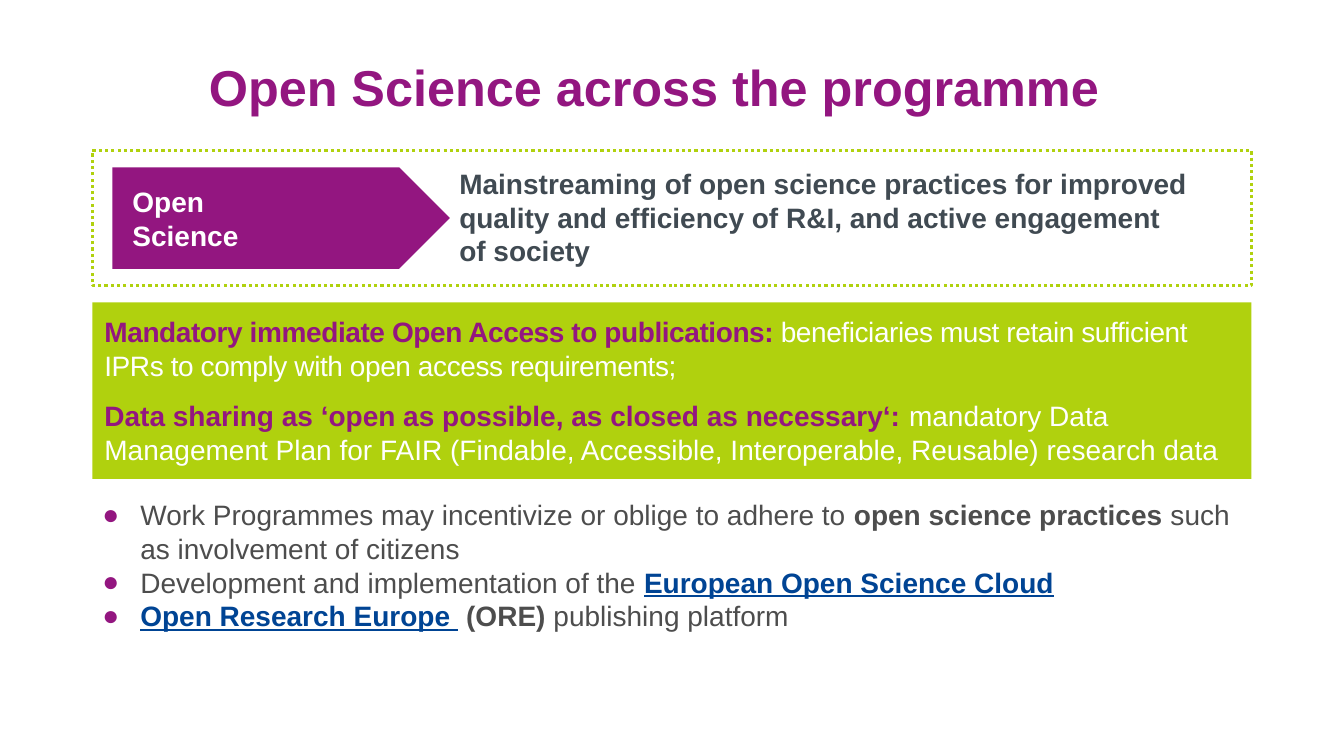
from lxml.etree import SubElement
from pptx import Presentation
from pptx.dml.color import RGBColor
from pptx.enum.dml import MSO_LINE
from pptx.enum.shapes import MSO_SHAPE
from pptx.enum.text import MSO_ANCHOR, MSO_AUTO_SIZE, PP_ALIGN
from pptx.oxml.ns import qn
from pptx.util import Pt

PURPLE, LIME, WHITE = "931680", "B0D10E", "FFFFFF"
SLATE, GREY, LINK = "404A52", "4D4D4D", "004494"
MARGIN, CONTENT_WIDTH = 66, 828


def colour(hex_string):
    return RGBColor.from_string(hex_string)


class ProgrammeSlide:
    font = "Arial"
    size = 20
    leading = 24

    def __init__(self, presentation):
        layout = presentation.slide_layouts[1]
        self.slide = presentation.slides.add_slide(layout)

    def run(self, paragraph, text, ink, bold=False, underline=False,
            size=None, tracking=0):
        for number, line in enumerate(text.split("\n")):
            if number:
                paragraph.add_line_break()
            run = paragraph.add_run()
            run.text = line
            font = run.font
            font.name, font.size = self.font, Pt(size or self.size)
            font.bold, font.underline = bold, underline
            font.color.rgb = colour(ink)
            if tracking:
                font._element.set("spc", str(round(tracking * 100)))

    def frame(self, shape, insets, anchor=MSO_ANCHOR.TOP):
        frame = shape.text_frame
        frame.word_wrap = True
        frame.auto_size = MSO_AUTO_SIZE.NONE
        frame.vertical_anchor = anchor
        (frame.margin_left, frame.margin_top,
         frame.margin_right, frame.margin_bottom) = map(Pt, insets)
        return frame

    def paragraph(self, frame, first, leading=None, after=0):
        paragraph = frame.paragraphs[0] if first else frame.add_paragraph()
        paragraph.alignment = PP_ALIGN.LEFT
        paragraph.line_spacing = Pt(leading or self.leading)
        paragraph.space_before, paragraph.space_after = Pt(0), Pt(after)
        return paragraph

    def indent(self, paragraph, left, hanging=0):
        properties = paragraph._p.get_or_add_pPr()
        properties.set("marL", str(Pt(left)))
        properties.set("indent", str(-Pt(hanging)))
        return properties

    def place(self, shape, left, top, width, height):
        shape.left, shape.top = Pt(left), Pt(top)
        shape.width, shape.height = Pt(width), Pt(height)

    def title(self, text, bounds):
        heading = self.slide.shapes.title
        self.place(heading, *bounds)
        frame = self.frame(heading, (7.2, 3.6, 7.2, 0))
        self.run(self.paragraph(frame, True, leading=43), text, PURPLE,
                 bold=True, size=36)

    def panel(self, preset, bounds, insets, paragraphs, fill=None,
              outline=None, anchor=MSO_ANCHOR.TOP, left_indent=0):
        panel = self.slide.shapes.add_shape(preset, *map(Pt, bounds))
        panel.shadow.inherit = False
        if fill:
            panel.fill.solid()
            panel.fill.fore_color.rgb = colour(fill)
        else:
            panel.fill.background()
        if outline:
            panel.line.color.rgb = colour(outline)
            panel.line.width = Pt(2.25)
            panel.line.dash_style = MSO_LINE.ROUND_DOT
        else:
            panel.line.fill.background()
        frame = self.frame(panel, insets, anchor)
        for number, (after, runs) in enumerate(paragraphs):
            paragraph = self.paragraph(frame, number == 0, after=after)
            self.indent(paragraph, left_indent)
            for run in runs:
                self.run(paragraph, **run)

    def bullets(self, bounds, items):
        body = self.slide.placeholders[1]
        self.place(body, *bounds)
        frame = self.frame(body, (7.2, 3.6, 7.2, 3.6))
        for number, runs in enumerate(items):
            paragraph = self.paragraph(frame, number == 0)
            properties = self.indent(paragraph, 27, hanging=27)
            ink = SubElement(properties, qn("a:buClr"))
            SubElement(ink, qn("a:srgbClr")).set("val", PURPLE)
            SubElement(properties, qn("a:buFont")).set("typeface", self.font)
            SubElement(properties, qn("a:buChar")).set("char", "●")
            for run in runs:
                self.run(paragraph, **run)


def text(words, ink=GREY, **style):
    return dict(text=words, ink=ink, **style)


def main():
    presentation = Presentation()
    presentation.slide_width, presentation.slide_height = Pt(960), Pt(540)
    page = ProgrammeSlide(presentation)

    page.title("Open Science across the programme", (142, 37, 752, 37.5))

    page.panel(
        MSO_SHAPE.RECTANGLE, (MARGIN, 107.5, CONTENT_WIDTH, 96.5),
        (7.2, 11.5, 7.2, 3.6),
        [(12, [text("Mainstreaming of open science practices for improved "
                    "quality and efficiency of R&I, and active engagement "
                    "\nof society", SLATE, bold=True)])],
        outline=LIME, left_indent=255)

    page.panel(
        MSO_SHAPE.RECTANGLE, (MARGIN, 216, CONTENT_WIDTH, 126), (8.6,) * 4,
        [(12, [text("Mandatory immediate Open Access to publications: ",
                    PURPLE, bold=True, tracking=-0.3),
               text("beneficiaries must retain sufficient IPRs to comply "
                    "with open access requirements;", WHITE, tracking=-0.3)]),
         (6, [text("Data sharing as ‘open as possible, as closed as "
                   "necessary‘: ", PURPLE, bold=True),
              text("mandatory Data Management Plan for FAIR (Findable, "
                   "Accessible, Interoperable, Reusable) research data",
                   WHITE)])],
        fill=LIME)

    page.panel(
        MSO_SHAPE.PENTAGON, (80.2, 119.5, 241.2, 72.5), (14.4, 3.6, 7.2, 3.6),
        [(0, [text("Open \nScience", WHITE, bold=True)])],
        fill=PURPLE, anchor=MSO_ANCHOR.MIDDLE)

    page.bullets((MARGIN, 352, CONTENT_WIDTH, 128), [
        [text("Work Programmes may incentivize or oblige to adhere to "),
         text("open science practices ", bold=True),
         text("such as involvement of citizens")],
        [text("Development and implementation of the "),
         text("European Open Science Cloud", LINK, bold=True, underline=True)],
        [text("Open Research Europe ", LINK, bold=True, underline=True),
         text(" (ORE) ", bold=True),
         text("publishing platform")],
    ])

    presentation.save("out.pptx")


if __name__ == "__main__":
    main()
